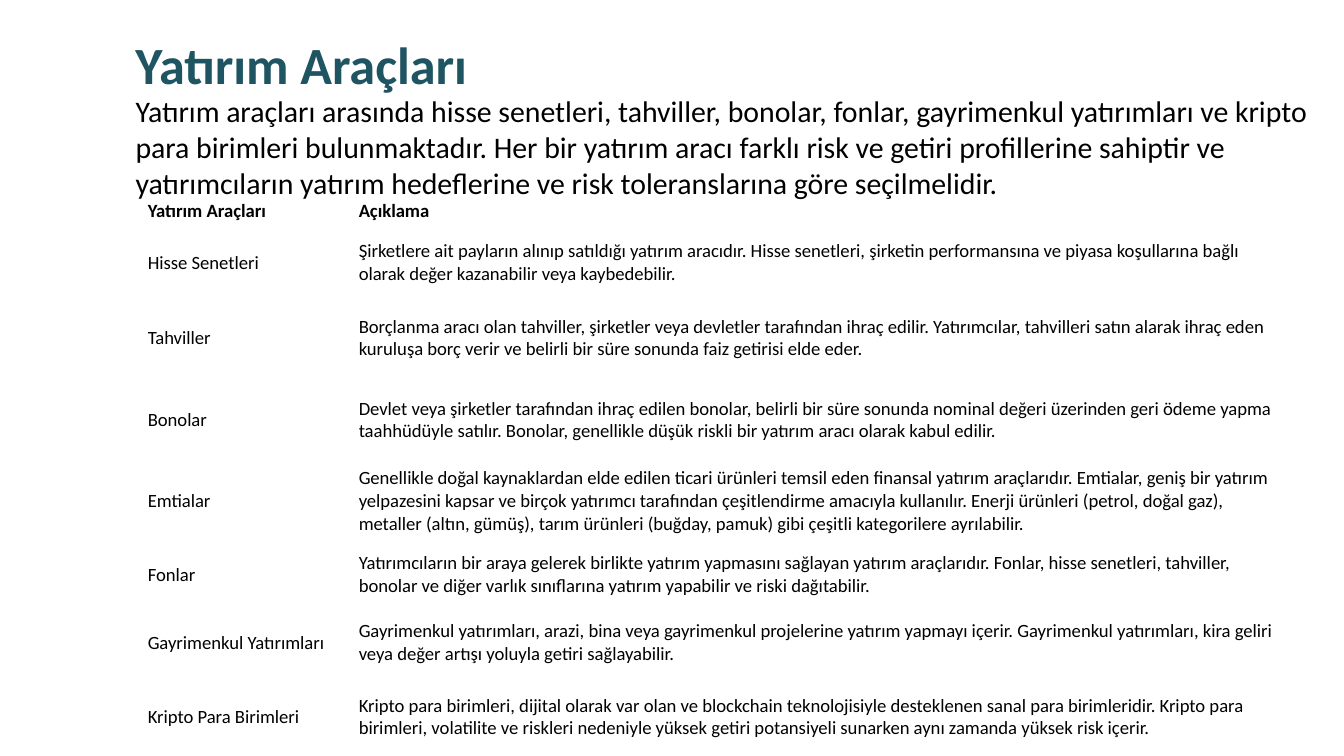
from dataclasses import dataclass

from pptx import Presentation
from pptx.dml.color import RGBColor
from pptx.enum.text import MSO_ANCHOR, MSO_AUTO_SIZE
from pptx.oxml.ns import qn
from pptx.util import Inches, Pt

MIDDLE = MSO_ANCHOR.MIDDLE
GROW = MSO_AUTO_SIZE.SHAPE_TO_FIT_TEXT
NO_STYLE_NO_GRID = "{2D5ABB26-0587-4C30-8999-92F81FD0307C}"


@dataclass(frozen=True)
class Theme:
    font: str = "Calibri"
    teal: str = "1F5463"
    black: str = "000000"
    title: int = 28
    body: int = 16
    cell: int = 10


theme = Theme()


def write(tf, text, size, color, bold=False):
    """Put one formatted run into a text frame."""
    r = tf.paragraphs[0].add_run()
    r.text = text
    for name, value in {"name": theme.font, "size": Pt(size), "bold": bold}.items():
        setattr(r.font, name, value)
    r.font.color.rgb = RGBColor.from_string(color)


def add_text(s, top, width, height, text, size, color, bold=False):
    """Add a wrapped text box on the left margin."""
    sp = s.shapes.add_textbox(Inches(0.91), Inches(top), Inches(width), Inches(height))
    tf = sp.text_frame
    tf.word_wrap = True
    tf.auto_size = GROW
    write(tf, text, size, color, bold)


# 16:9 slide
prs = Presentation()
prs.slide_width = Inches(10)
prs.slide_height = Inches(10) * 9 // 16
s = prs.slides.add_slide(prs.slide_layouts[6])

# Title
add_text(s, 0.19, 5, 0.57, "Yatırım Araçları", theme.title, theme.teal, bold=True)

# Table content: row height, instrument, description
rows = [
    (0.2, "Yatırım Araçları", "Açıklama"),
    (0.56, "Hisse Senetleri",
     "Şirketlere ait payların alınıp satıldığı yatırım aracıdır. Hisse senetleri, "
     "şirketin performansına ve piyasa koşullarına bağlı olarak değer kazanabilir "
     "veya kaybedebilir."),
    (0.56, "Tahviller",
     "Borçlanma aracı olan tahviller, şirketler veya devletler tarafından ihraç "
     "edilir. Yatırımcılar, tahvilleri satın alarak ihraç eden kuruluşa borç verir "
     "ve belirli bir süre sonunda faiz getirisi elde eder."),
    (0.66, "Bonolar",
     "Devlet veya şirketler tarafından ihraç edilen bonolar, belirli bir süre "
     "sonunda nominal değeri üzerinden geri ödeme yapma taahhüdüyle satılır. "
     "Bonolar, genellikle düşük riskli bir yatırım aracı olarak kabul edilir."),
    (0.52, "Emtialar",
     "Genellikle doğal kaynaklardan elde edilen ticari ürünleri temsil eden "
     "finansal yatırım araçlarıdır. Emtialar, geniş bir yatırım yelpazesini kapsar "
     "ve birçok yatırımcı tarafından çeşitlendirme amacıyla kullanılır. Enerji "
     "ürünleri (petrol, doğal gaz), metaller (altın, gümüş), tarım ürünleri "
     "(buğday, pamuk) gibi çeşitli kategorilere ayrılabilir."),
    (0.56, "Fonlar",
     "Yatırımcıların bir araya gelerek birlikte yatırım yapmasını sağlayan yatırım "
     "araçlarıdır. Fonlar, hisse senetleri, tahviller, bonolar ve diğer varlık "
     "sınıflarına yatırım yapabilir ve riski dağıtabilir."),
    (0.45, "Gayrimenkul Yatırımları",
     "Gayrimenkul yatırımları, arazi, bina veya gayrimenkul projelerine yatırım "
     "yapmayı içerir. Gayrimenkul yatırımları, kira geliri veya değer artışı "
     "yoluyla getiri sağlayabilir."),
    (0.66, "Kripto Para Birimleri",
     "Kripto para birimleri, dijital olarak var olan ve blockchain teknolojisiyle "
     "desteklenen sanal para birimleridir. Kripto para birimleri, volatilite ve "
     "riskleri nedeniyle yüksek getiri potansiyeli sunarken aynı zamanda yüksek "
     "risk içerir."),
]

# Plain table without banding or grid
widths = [1.57, 6.93]
frame = s.shapes.add_table(
    len(rows), len(widths), Inches(1.06), Inches(1.47),
    Inches(sum(widths)), Inches(sum(row[0] for row in rows)),
)
table = frame.table
table.first_row = table.horz_banding = False
for style in frame.element.iter(qn("a:tableStyleId")):
    style.text = NO_STYLE_NO_GRID
for column, width in zip(table.columns, widths):
    column.width = Inches(width)

cell_format = {
    "vertical_anchor": MIDDLE,
    "margin_left": Inches(0.04),
    "margin_right": Inches(0.04),
    "margin_top": Inches(0.02),
    "margin_bottom": Inches(0.02),
}
for i, (height, *texts) in enumerate(rows):
    table.rows[i].height = Inches(height)
    for j, text in enumerate(texts):
        cell = table.cell(i, j)
        cell.fill.background()
        for name, value in cell_format.items():
            setattr(cell, name, value)
        write(cell.text_frame, text, theme.cell, theme.black, bold=i == 0)

# Introduction
intro = (
    "Yatırım araçları arasında hisse senetleri, tahviller, bonolar, fonlar, "
    "gayrimenkul yatırımları ve kripto para birimleri bulunmaktadır. Her bir "
    "yatırım aracı farklı risk ve getiri profillerine sahiptir ve yatırımcıların "
    "yatırım hedeflerine ve risk toleranslarına göre seçilmelidir."
)
add_text(s, 0.64, 9.09, 0.91, intro, theme.body, theme.black)

prs.save("out.pptx")
